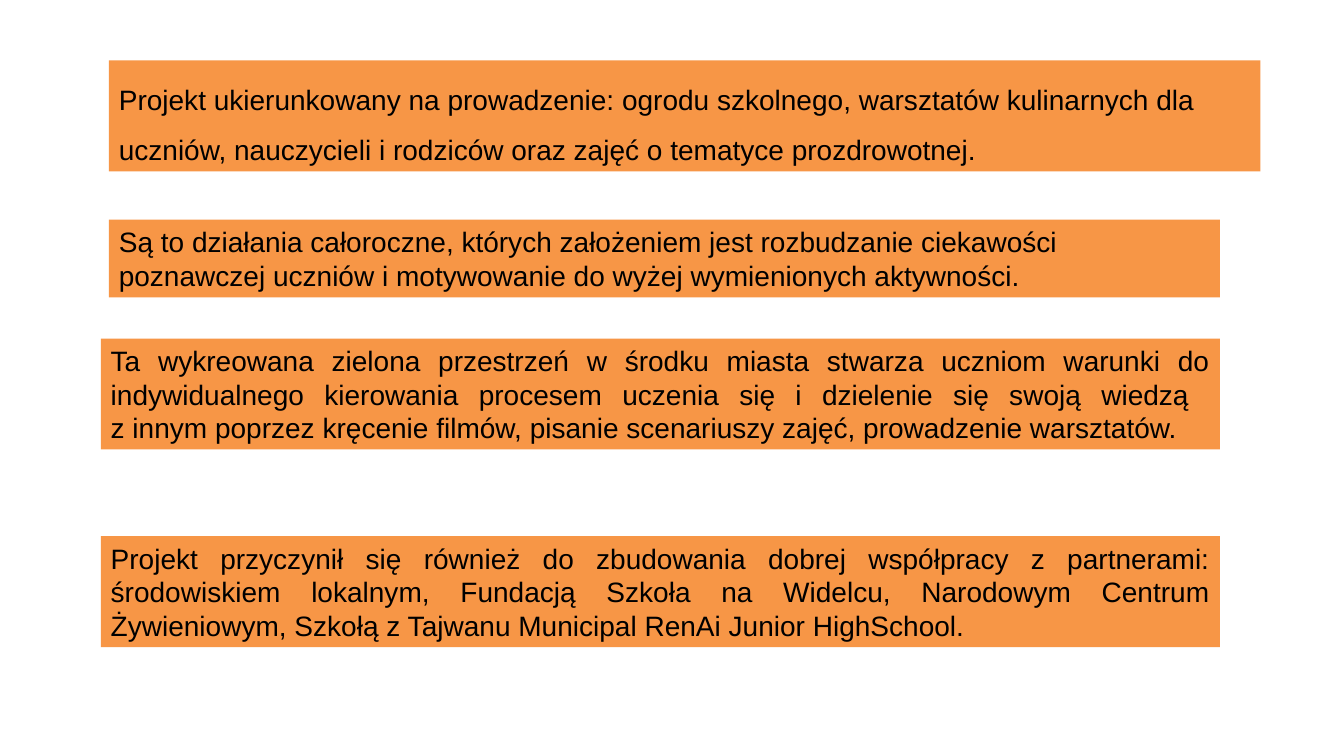
from pptx import Presentation, util as u
from pptx.dml.color import RGBColor
from pptx.enum import shapes, text

COLORS = {"panel": "F79646", "text": "000000"}
W, H = 13.33, 7.5
LEFT, INDENTED, RIGHT = 1, 1.08, 12.1
JUSTIFY, START = text.PP_ALIGN.JUSTIFY, text.PP_ALIGN.LEFT

PANELS = [
    ((INDENTED, 0.6, 12.5 - INDENTED, 1.1), START, 1.5,
     ["Projekt ukierunkowany na prowadzenie: ogrodu szkolnego, warsztatów kulinarnych dla "
      "uczniów, nauczycieli i rodziców oraz zajęć o tematyce prozdrowotnej."]),
    ((INDENTED, 2.18, RIGHT - INDENTED, 0.77), START, 1.0,
     ["Są to działania całoroczne, których założeniem jest rozbudzanie ciekawości "
      "poznawczej uczniów i motywowanie do wyżej wymienionych aktywności."]),
    ((LEFT, 3.36, RIGHT - LEFT, 1.1), JUSTIFY, 1.0,
     ["Ta wykreowana zielona przestrzeń w środku miasta stwarza uczniom warunki do "
      "indywidualnego kierowania procesem uczenia się i dzielenie się swoją wiedzą ",
      "z innym poprzez kręcenie filmów, pisanie scenariuszy zajęć, prowadzenie warsztatów."]),
    ((LEFT, 5.32, RIGHT - LEFT, 1.1), JUSTIFY, 1.0,
     ["Projekt przyczynił się również do zbudowania dobrej współpracy z partnerami: "
      "środowiskiem lokalnym, Fundacją Szkoła na Widelcu, Narodowym Centrum "
      "Żywieniowym, Szkołą z Tajwanu Municipal RenAi Junior HighSchool."]),
]


def add_panel(s, box, align, spacing, lines):
    """Place one filled text panel in the given box."""
    sp = s.shapes.add_shape(shapes.MSO_SHAPE.RECTANGLE, *(u.Inches(v) for v in box))
    sp.shadow.inherit = False
    sp.fill.solid()
    sp.fill.fore_color.rgb = RGBColor.from_string(COLORS["panel"])
    sp.line.fill.background()
    tf = sp.text_frame
    tf.word_wrap = True
    tf.vertical_anchor = text.MSO_ANCHOR.TOP
    p = tf.paragraphs[0]
    p.alignment = align
    p.line_spacing = spacing
    for i, line in enumerate(lines):
        if i:
            p.add_line_break()
        r = p.add_run()
        r.text = line
        r.font.name = "Arial"
        r.font.size = u.Pt(20)
        r.font.color.rgb = RGBColor.from_string(COLORS["text"])


def main():
    """Build the slide and save it."""
    prs = Presentation()
    prs.slide_width, prs.slide_height = u.Inches(W), u.Inches(H)
    s = prs.slides.add_slide(prs.slide_layouts[6])
    for panel in PANELS:
        add_panel(s, *panel)
    prs.save("out.pptx")


if __name__ == "__main__":
    main()
